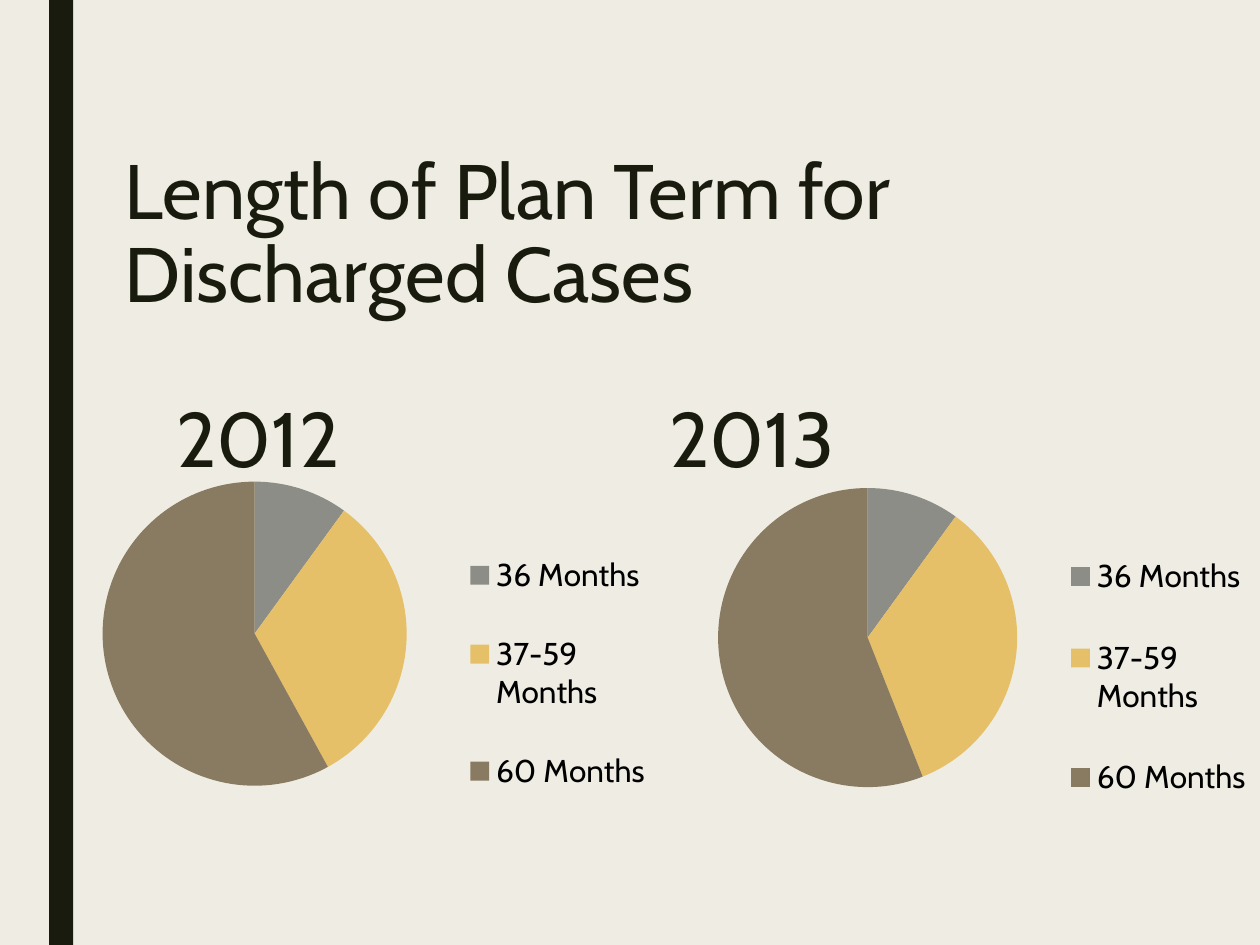
import pptx
import pptx.util
import pptx.chart.data
import pptx.dml.color
import pptx.enum.chart
import pptx.enum.shapes
import pptx.enum.text
import pptx.oxml
import pptx.oxml.ns
import lxml.etree

Inches = pptx.util.Inches
Pt = pptx.util.Pt
RGB = pptx.dml.color.RGBColor.from_string
qn = pptx.oxml.ns.qn

FONT = "Cabin"
COLORS = {"paper": "EFEDE3", "ink": "191B0E", "legend": "000000"}
SLICES = {"36 Months": "8C8D86", "37-59 Months": "E6C069", "60 Months": "897B61"}


def make_layout(x, y, width, height, inner=False):
    layout = pptx.oxml.parse_xml(
        '<c:layout xmlns:c="http://schemas.openxmlformats.org/drawingml/2006/chart"/>')
    manual = lxml.etree.SubElement(layout, qn("c:manualLayout"))
    settings = [("layoutTarget", "inner")] if inner else []
    settings += [("xMode", "edge"), ("yMode", "edge"),
                 ("x", x), ("y", y), ("w", width), ("h", height)]
    for name, value in settings:
        lxml.etree.SubElement(manual, qn("c:" + name)).set("val", str(value))
    return layout


deck = pptx.Presentation()
deck.slide_width = Inches(10)
deck.slide_height = Inches(7.5)
page = deck.slides.add_slide(deck.slide_layouts[5])
page.background.fill.solid()
page.background.fill.fore_color.rgb = RGB(COLORS["paper"])

stripe = page.shapes.add_shape(pptx.enum.shapes.MSO_SHAPE.RECTANGLE,
                               Inches(0.39), 0, Inches(0.19), Inches(7.5))
stripe.shadow.inherit = False
stripe.fill.solid()
stripe.fill.fore_color.rgb = RGB(COLORS["ink"])
stripe.line.fill.background()

title = page.shapes.title
title.left, title.top = Inches(0.89), Inches(1.17)
title.width, title.height = Inches(9.08), Inches(1.92)
frame = title.text_frame
frame.text = "Length of Plan Term for Discharged Cases\n\t2012\t2013"
frame.word_wrap = True
frame.auto_size = pptx.enum.text.MSO_AUTO_SIZE.NONE
frame.vertical_anchor = pptx.enum.text.MSO_ANCHOR.TOP
for para in frame.paragraphs:
    para.alignment = pptx.enum.text.PP_ALIGN.LEFT
    para.line_spacing = 0.89
    para.space_before = Pt(0)
    for span in para.runs:
        span.font.name = FONT
        span.font.size = Pt(44.1)
        span.font.color.rgb = RGB(COLORS["ink"])

years = frame.paragraphs[1]
years.space_before = Pt(47.5)
tabs = lxml.etree.SubElement(years._p.get_or_add_pPr(), qn("a:tabLst"))
for position in (0.41, 4.32):
    tab = lxml.etree.SubElement(tabs, qn("a:tab"))
    tab.set("pos", str(Inches(position)))
    tab.set("algn", "l")

pies = [
    ((0.67, 2.75, 4.58, 4.47), (10, 32, 58),
     (0.03, 0.24, 0.53, 0.54), (0.64, 0.3, 0.36, 0.56)),
    ((5.52, 2.83, 4.48, 4.17), (10, 34, 56),
     (0.04, 0.25, 0.53, 0.57), (0.64, 0.3, 0.36, 0.62)),
]
for place, values, plot_area, legend_area in pies:
    data = pptx.chart.data.CategoryChartData()
    data.categories = list(SLICES)
    data.add_series("Series 1", values)
    chart = page.shapes.add_chart(pptx.enum.chart.XL_CHART_TYPE.PIE,
                                  *map(Inches, place), data).chart
    chart.has_title = False
    chart.font.name = FONT
    chart.font.size = Pt(18)
    chart.font.color.rgb = RGB(COLORS["legend"])

    chart.has_legend = True
    legend = chart.legend
    legend.position = pptx.enum.chart.XL_LEGEND_POSITION.RIGHT
    legend.include_in_layout = False
    legend._element.find(qn("c:legendPos")).addnext(make_layout(*legend_area))

    plot = chart.plots[0]
    plot.vary_by_categories = True
    plot_xml = chart._chartSpace.chart.plotArea
    for layout in plot_xml.findall(qn("c:layout")):
        plot_xml.remove(layout)
    plot_xml.insert(0, make_layout(*plot_area, inner=True))
    for index, color in enumerate(SLICES.values()):
        fill = plot.series[0].points[index].format.fill
        fill.solid()
        fill.fore_color.rgb = RGB(color)

deck.save("out.pptx")
